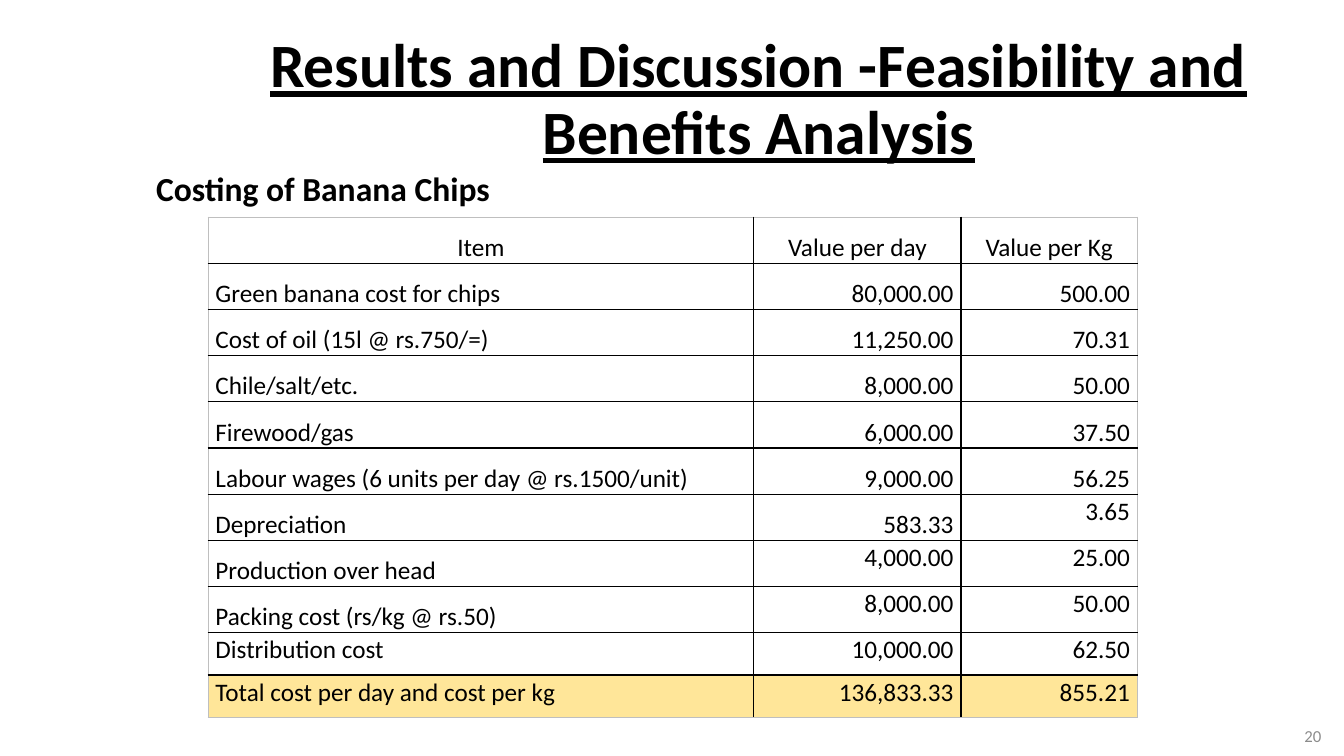
from lxml import etree
from pptx import Presentation
from pptx import util as u
from pptx.dml.color import RGBColor
from pptx.enum import text
from pptx.oxml.ns import qn

COLOURS = {"ink": "000000", "edge": "BFBFBF", "number": "8C8C8C", "total": "FFE699"}
LEFT, CENTER, RIGHT = text.PP_ALIGN.LEFT, text.PP_ALIGN.CENTER, text.PP_ALIGN.RIGHT


def write(frame, words, size, align, colour="ink", bold=False, spacing=1.0):
    frame.text = words
    paragraph = frame.paragraphs[0]
    paragraph.alignment = align
    paragraph.line_spacing = spacing
    font = paragraph.runs[0].font
    font.name = "Calibri"
    font.size = u.Pt(size)
    font.bold = bold
    font.color.rgb = RGBColor.from_string(COLOURS[colour])
    return font


def add_border(cell, side, colour, width):
    """Draw one cell side (L, R, T or B); call before the cell is filled."""
    line = etree.SubElement(cell._tc.get_or_add_tcPr(), qn(f"a:ln{side}"), w=str(u.Pt(width)))
    fill = etree.SubElement(line, qn("a:solidFill"))
    etree.SubElement(fill, qn("a:srgbClr"), val=COLOURS[colour])


presentation = Presentation()
presentation.slide_width, presentation.slide_height = u.Pt(960), u.Pt(540)
slide = presentation.slides.add_slide(presentation.slide_layouts[5])

# Title
title = slide.shapes.title
title.left, title.top, title.width, title.height = u.Pt(152), u.Pt(20), u.Pt(780), u.Pt(104.4)
title_font = write(title.text_frame, "Results and Discussion -Feasibility and Benefits Analysis",
                   44, CENTER, bold=True, spacing=0.9)
title_font.underline = True
title.text_frame.vertical_anchor = text.MSO_ANCHOR.MIDDLE
title.text_frame.auto_size = text.MSO_AUTO_SIZE.NONE

# Subheading and slide number
labels = [
    ("Costing of Banana Chips", (104.4, 116, 273.6, 36), 24, LEFT, "ink", True),
    ("20", (735, 511, 216, 29), 12, RIGHT, "number", False),
]
for words, box, size, align, colour, bold in labels:
    label = slide.shapes.add_textbox(*map(u.Pt, box))
    label.text_frame.word_wrap = True
    label.text_frame.vertical_anchor = text.MSO_ANCHOR.MIDDLE
    write(label.text_frame, words, size, align, colour, bold)

# Cost table
costs = [
    ("Item", "Value per day", "Value per Kg"),
    ("Green banana cost for chips", "80,000.00", "500.00"),
    ("Cost of oil (15l @ rs.750/=)", "11,250.00", "70.31"),
    ("Chile/salt/etc.", "8,000.00", "50.00"),
    ("Firewood/gas", "6,000.00", "37.50"),
    ("Labour wages (6 units per day @ rs.1500/unit)", "9,000.00", "56.25"),
    ("Depreciation", "583.33", "3.65"),
    ("Production over head", "4,000.00", "25.00"),
    ("Packing cost (rs/kg @ rs.50)", "8,000.00", "50.00"),
    ("Distribution cost", "10,000.00", "62.50"),
    ("Total cost per day and cost per kg", "136,833.33", "855.21"),
]
column_widths = (390, 148, 126)
row_heights = [33] * 9 + [30.2] * 2
loose_rows = (9, 7, 6)  # rows with 1.5 line spacing, per column
last_row, last_column = len(costs) - 1, len(column_widths) - 1

table = slide.shapes.add_table(
    len(costs), len(column_widths), u.Pt(148.5), u.Pt(155),
    u.Pt(sum(column_widths)), u.Pt(sum(row_heights))).table
for column, width in zip(table.columns, column_widths):
    column.width = u.Pt(width)
for row, height in zip(table.rows, row_heights):
    row.height = u.Pt(height)

for r, values in enumerate(costs):
    for c, value in enumerate(values):
        cell = table.cell(r, c)
        cell.margin_left = cell.margin_right = u.Pt(5.4)
        cell.margin_top = cell.margin_bottom = 0
        align = CENTER if r == 0 else LEFT if c == 0 else RIGHT
        write(cell.text_frame, value, 18, align, spacing=1.5 if r < loose_rows[c] else 1.07)
        outer_sides = {"L": c == 0, "R": c == last_column, "T": r == 0, "B": r == last_row}
        for side, outer in outer_sides.items():
            add_border(cell, side, "edge" if outer else "ink", 0.5 if outer else 1)
        if r == last_row:
            cell.fill.solid()
            cell.fill.fore_color.rgb = RGBColor.from_string(COLOURS["total"])
        else:
            cell.fill.background()

presentation.save("out.pptx")
